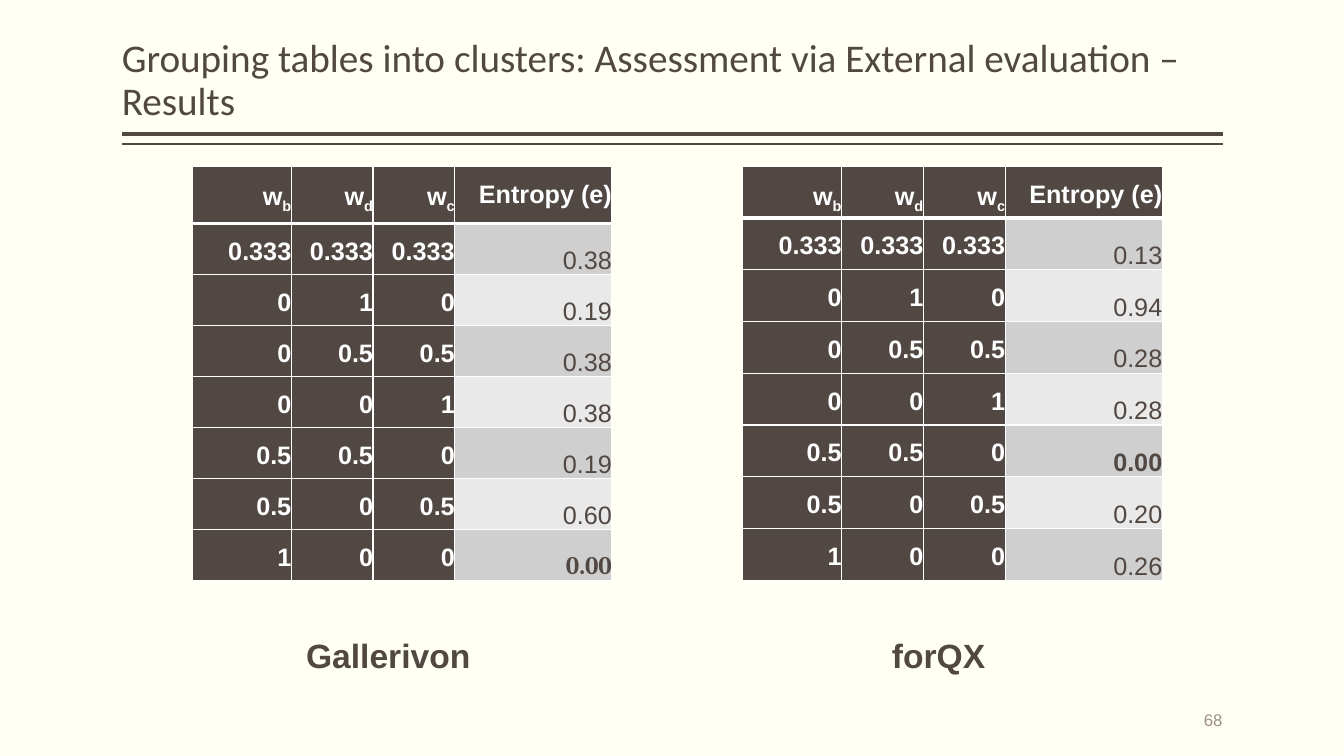
from lxml import etree
from pptx import Presentation
from pptx.dml.color import RGBColor
from pptx.enum.shapes import MSO_CONNECTOR
from pptx.enum.text import MSO_ANCHOR, MSO_AUTO_SIZE, PP_ALIGN
from pptx.oxml.ns import qn
from pptx.util import Cm, Pt

STRAIGHT = MSO_CONNECTOR.STRAIGHT
TOP, MIDDLE, BOTTOM = MSO_ANCHOR.TOP, MSO_ANCHOR.MIDDLE, MSO_ANCHOR.BOTTOM
LEFT, CENTER, RIGHT = PP_ALIGN.LEFT, PP_ALIGN.CENTER, PP_ALIGN.RIGHT

TITLE = "Grouping tables into clusters: Assessment via External evaluation – Results"
PAGE_NUMBER = "68"
# Each heading is a base text and its subscript
HEADINGS = [("w", "b"), ("w", "d"), ("w", "c"), ("Entropy (e)", "")]
WEIGHTS = [
    ("0.333", "0.333", "0.333"),
    ("0", "1", "0"),
    ("0", "0.5", "0.5"),
    ("0", "0", "1"),
    ("0.5", "0.5", "0"),
    ("0.5", "0", "0.5"),
    ("1", "0", "0"),
]
BEST_ENTROPY = "0.00"
DATASETS = [
    {"name": "Gallerivon", "entropies": ["0.38", "0.19", "0.38", "0.38", "0.19", "0.60", "0.00"],
     "best_font": "Cambria", "table_left": 4.85, "header_height": 1.44,
     "caption_left": 3.07, "caption_width": 13.67},
    {"name": "forQX", "entropies": ["0.13", "0.94", "0.28", "0.28", "0.00", "0.20", "0.26"],
     "best_font": "Arial", "table_left": 18.72, "header_height": 1.3,
     "caption_left": 16.74, "caption_width": 14.07},
]

COLORS = {"background": "FFFFF3", "dark": "514843", "white": "FFFFFF",
          "odd_band": "D0CFCF", "even_band": "E9E9E9", "page_number": "9D8F88"}
MARGIN_LEFT, MARGIN_RIGHT = 3.07, 30.81
RULES = [(3.38, 3), (3.63, 1)]  # height on the slide, thickness in points
TABLE_TOP, TABLE_HEIGHT = 4.19, 10.44
COLUMN_WIDTHS = [2.49, 2.06, 2.06, 3.96]
THIN, THICK = 1, 3


def rgb(name):
    return RGBColor.from_string(COLORS[name])


def format_run(run, size, color, font="Arial", bold=False):
    run.font.size = Pt(size)
    run.font.name = font
    run.font.bold = bold
    run.font.color.rgb = rgb(color)


def fill_frame(shape, text, anchor, align, right_inset=0):
    frame = shape.text_frame
    frame.text = text
    frame.word_wrap = True
    frame.auto_size = MSO_AUTO_SIZE.NONE
    frame.vertical_anchor = anchor
    frame.margin_left, frame.margin_right = 0, Cm(right_inset)
    frame.margin_top = frame.margin_bottom = Cm(0.13)
    paragraph = frame.paragraphs[0]
    paragraph.alignment = align
    paragraph.line_spacing = 0.9
    return paragraph.runs[0]


def add_label(slide, box, *frame_options):
    return fill_frame(slide.shapes.add_textbox(*map(Cm, box)), *frame_options)


def add_rule(slide, y, thickness):
    rule = slide.shapes.add_connector(STRAIGHT, Cm(MARGIN_RIGHT), Cm(y), Cm(MARGIN_LEFT), Cm(y))
    rule.line.color.rgb = rgb("dark")
    rule.line.width = Pt(thickness)
    etree.SubElement(rule._element.spPr, qn("a:effectLst"))


def set_borders(cell, top, bottom):
    properties = cell._tc.get_or_add_tcPr()
    for side, thickness in (("L", THIN), ("R", THIN), ("T", top), ("B", bottom)):
        border = etree.SubElement(properties, qn(f"a:ln{side}"), w=str(Pt(thickness)))
        solid = etree.SubElement(border, qn("a:solidFill"))
        etree.SubElement(solid, qn("a:srgbClr"), val=COLORS["white"])


def fill_cell(cell, text, fill, color, font="Arial", bold=True, subscript="",
              anchor=TOP, top=THIN, bottom=THIN):
    cell.margin_left = cell.margin_right = cell.margin_top = cell.margin_bottom = 0
    cell.vertical_anchor = anchor
    cell.text_frame.text = text
    paragraph = cell.text_frame.paragraphs[0]
    paragraph.alignment = RIGHT
    paragraph.line_spacing = 1.5
    if subscript:
        index = paragraph.add_run()
        index.text = subscript
        index.font._element.set("baseline", "-25000")
    for run in paragraph.runs:
        format_run(run, 18, color, font, bold)
    set_borders(cell, top, bottom)
    cell.fill.solid()
    cell.fill.fore_color.rgb = rgb(fill)


def add_entropy_table(slide, dataset):
    table = slide.shapes.add_table(
        len(WEIGHTS) + 1, len(HEADINGS), Cm(dataset["table_left"]), Cm(TABLE_TOP),
        Cm(sum(COLUMN_WIDTHS)), Cm(TABLE_HEIGHT)).table
    for column, width in zip(table.columns, COLUMN_WIDTHS):
        column.width = Cm(width)
    body_height = (TABLE_HEIGHT - dataset["header_height"]) / len(WEIGHTS)
    for number, row in enumerate(table.rows):
        row.height = Cm(body_height if number else dataset["header_height"])

    for column, (base, subscript) in enumerate(HEADINGS):
        fill_cell(table.cell(0, column), base, "dark", "white", subscript=subscript, bottom=THICK)
    for number, (weights, entropy) in enumerate(zip(WEIGHTS, dataset["entropies"]), 1):
        top = THICK if number == 1 else THIN
        for column, weight in enumerate(weights):
            fill_cell(table.cell(number, column), weight, "dark", "white", top=top)
        best = entropy == BEST_ENTROPY
        fill_cell(table.cell(number, len(weights)), entropy,
                  "odd_band" if number % 2 else "even_band", "dark",
                  dataset["best_font"] if best else "Arial", best, anchor=BOTTOM, top=top)


def main():
    presentation = Presentation()
    presentation.slide_width, presentation.slide_height = Cm(33.87), Cm(19.05)
    slide = presentation.slides.add_slide(presentation.slide_layouts[5])
    slide.background.fill.solid()
    slide.background.fill.fore_color.rgb = rgb("background")

    title = slide.shapes.title
    title.left, title.top = Cm(MARGIN_LEFT), Cm(0.2)
    title.width, title.height = Cm(MARGIN_RIGHT - MARGIN_LEFT), Cm(3.05)
    format_run(fill_frame(title, TITLE, BOTTOM, LEFT), 28, "dark", "Calibri")
    for y, thickness in RULES:
        add_rule(slide, y, thickness)

    for dataset in DATASETS:
        add_entropy_table(slide, dataset)
        caption_box = (dataset["caption_left"], 14.86, dataset["caption_width"], 2.29)
        caption = add_label(slide, caption_box, dataset["name"], BOTTOM, CENTER, 0.24)
        format_run(caption, 24, "dark", bold=True)

    page_number = add_label(slide, (25.72, 17.65, 5.09, 1.02), PAGE_NUMBER, MIDDLE, RIGHT)
    format_run(page_number, 12, "page_number")
    presentation.save("out.pptx")


if __name__ == "__main__":
    main()
